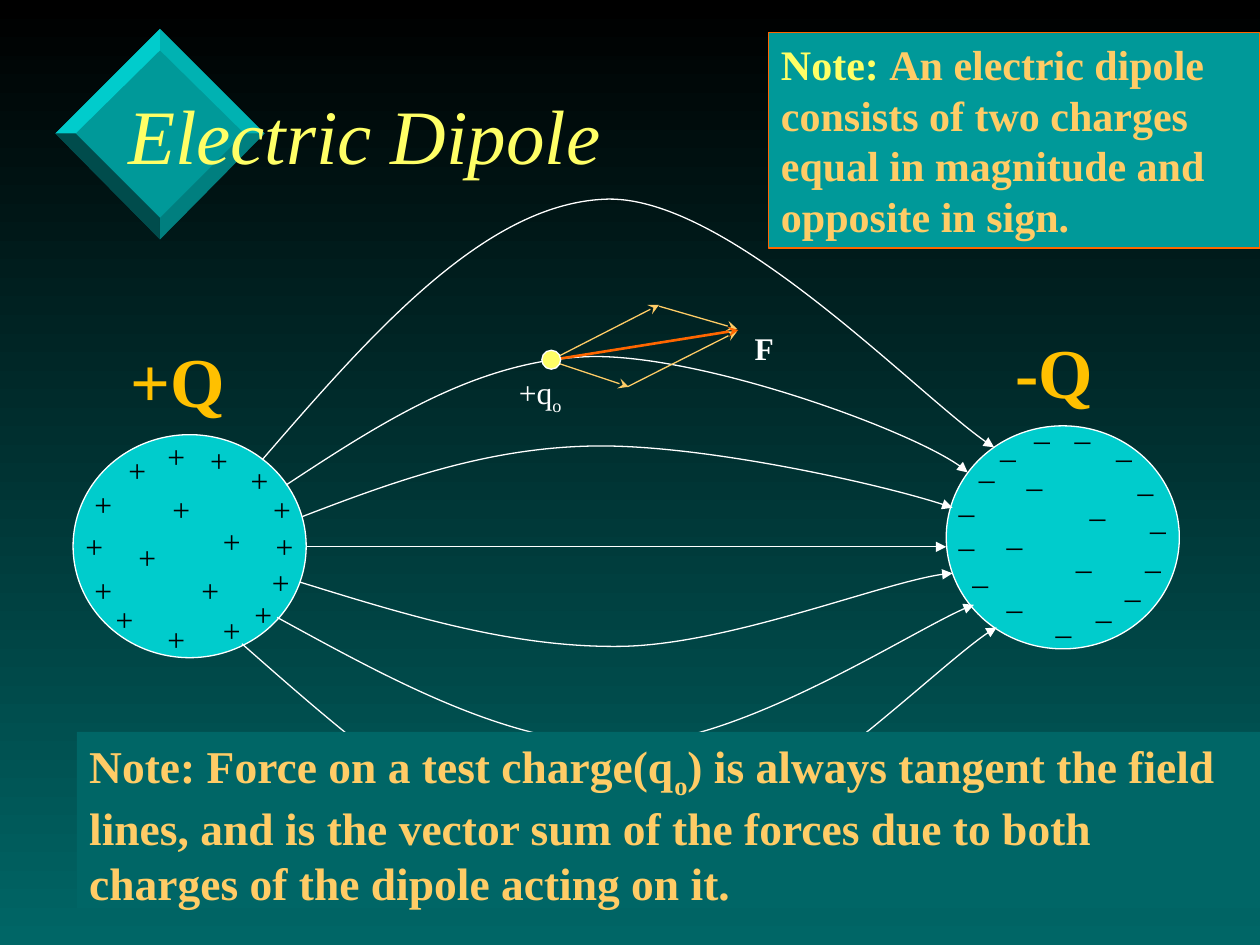
from lxml import etree
from pptx import Presentation
from pptx.dml.color import RGBColor
from pptx.enum.shapes import MSO_CONNECTOR, MSO_SHAPE
from pptx.enum.text import MSO_ANCHOR, MSO_AUTO_SIZE
from pptx.oxml.ns import qn
from pptx.util import Inches, Pt

STRAIGHT = MSO_CONNECTOR.STRAIGHT
OVAL = MSO_SHAPE.OVAL
MIDDLE = MSO_ANCHOR.MIDDLE
GROW = MSO_AUTO_SIZE.SHAPE_TO_FIT_TEXT

COLORS = {
    "black": "000000", "white": "FFFFFF", "deep": "006666", "teal": "009999",
    "cyan": "00CCCC", "yellow": "FFFF66", "sand": "FFCC66",
    "orange": "FF6600", "gold": "FFC000",
}


def rgb(name):
    return RGBColor.from_string(COLORS[name])


class Board:
    """Holds the text style and the current slide."""

    font = "Times New Roman"

    def __init__(self, page):
        self.page = page
        self.shapes = page.shapes

    def background(self, top, bottom):
        fill = self.page.background.fill
        fill.gradient()
        fill.gradient_angle = 270
        for stop, name, position in zip(fill.gradient_stops, (top, bottom), (0, 1)):
            stop.color.rgb = rgb(name)
            stop.position = position

    def paint(self, shape, fill=None, line=None, alpha=None):
        if fill:
            shape.fill.solid()
            shape.fill.fore_color.rgb = rgb(fill)
        else:
            shape.fill.background()
        if alpha:
            color = shape._element.spPr.find(qn("a:solidFill"))[0]
            etree.SubElement(color, qn("a:alpha")).set("val", str(alpha * 1000))
        if line:
            shape.line.color.rgb = rgb(line)
            shape.line.width = Pt(0.75)
        else:
            shape.line.fill.background()

    def arrowhead(self, shape, kind):
        line = shape.line._get_or_add_ln()
        etree.SubElement(line, qn("a:tailEnd")).set("type", kind)

    def circle(self, left, top, width, height, fill):
        shape = self.shapes.add_shape(
            OVAL, Inches(left), Inches(top), Inches(width), Inches(height))
        shape.shadow.inherit = False
        self.paint(shape, fill, "white")

    def outline(self, points, closed):
        points = [(Inches(x), Inches(y)) for x, y in points]
        builder = self.shapes.build_freeform(*points[0], scale=1.0)
        builder.add_line_segments(points[1:], close=closed)
        shape = builder.convert_to_shape()
        shape.shadow.inherit = False
        return shape

    def facet(self, points, fill, alpha=None):
        self.paint(self.outline(points, True), fill, alpha=alpha)

    def field_line(self, points):
        """Draw a start point followed by triples of Bezier points."""
        shape = self.outline(points, False)
        self.paint(shape, line="white")
        self.arrowhead(shape, "triangle")
        segments = list(shape._element.spPr.iter(qn("a:lnTo")))
        for first in range(0, len(segments), 3):
            curve, *others = segments[first:first + 3]
            curve.tag = qn("a:cubicBezTo")
            for other in others:
                curve.append(other[0])
                other.getparent().remove(other)

    def arrow(self, start, end, color, kind="stealth", width=0.75):
        line = self.shapes.add_connector(
            STRAIGHT, *(Inches(value) for value in (*start, *end)))
        line.line.color.rgb = rgb(color)
        line.line.width = Pt(width)
        self.arrowhead(line, kind)
        etree.SubElement(line._element.spPr, qn("a:effectLst"))

    def text(self, place, spans, size, bold=False, italic=False,
             wrap=False, grow=True, fill=None, line=None):
        """Write spans of (text, colour) or (text, colour, baseline)."""
        box = self.shapes.add_textbox(*(Inches(value) for value in place))
        self.paint(box, fill, line)
        frame = box.text_frame
        frame.word_wrap = wrap
        if grow:
            frame.auto_size = GROW
        else:
            frame.vertical_anchor = MIDDLE
        para = frame.paragraphs[0]
        para.font.name = self.font
        para.font.size = Pt(size)
        para.font.bold = bold
        para.font.italic = italic
        for content, color, *baseline in spans:
            span = para.add_run()
            span.text = content
            span.font.color.rgb = rgb(color)
            if baseline:
                span._r.get_or_add_rPr().set("baseline", str(baseline[0] * 1000))


def main():
    deck = Presentation()
    deck.slide_width, deck.slide_height = Inches(10), Inches(7.5)
    board = Board(deck.slides.add_slide(deck.slide_layouts[6]))
    board.background("black", "deep")

    # Bevelled diamond: outer and inner corners
    top, right, bottom, left = (1.27, 0.23), (2.1, 1.06), (1.27, 1.9), (0.44, 1.06)
    in_top, in_right, in_bottom, in_left = (1.27, 0.4), (1.94, 1.06), (1.27, 1.73), (0.6, 1.06)
    board.facet([top, left, bottom, right], "teal")
    board.facet([in_top, top, right, in_right], "cyan", 50)
    board.facet([top, in_top, in_left, left], "cyan")
    board.facet([in_right, right, bottom, in_bottom], "deep", 50)
    board.facet([in_left, in_bottom, bottom, left], "black", 50)

    # Title
    board.text((0.92, 0.46, 8.51, 1.21), [("Electric Dipole", "yellow")], 44,
               italic=True, wrap=True, grow=False)

    # Charged spheres, each with its signs
    plus_places = [
        (1.57, 3.45), (1.89, 3.61), (2.07, 3.84), (2.09, 4.13), (1.67, 4.09), (2.06, 4.42),
        (1.92, 4.67), (1.5, 4.48), (1.67, 4.8), (1, 4.22), (1.23, 4.87), (0.65, 4.48),
        (0.82, 4.71), (0.92, 3.53), (1.27, 3.84), (1.23, 3.42), (0.58, 4.13), (0.65, 3.8)]
    minus_places = [
        (8.43, 3.2), (8.11, 3.2), (9.03, 3.91), (7.84, 3.34), (7.51, 3.78), (7.51, 4.05),
        (7.62, 4.34), (8.93, 3.61), (8.99, 4.22), (7.67, 3.51), (8.83, 4.45), (8.6, 4.62),
        (8.28, 4.74), (7.89, 4.54), (8.76, 3.34), (8.05, 3.57), (8.55, 3.81), (7.89, 4.04),
        (8.44, 4.22)]
    for x, y, sign, width, places in ((0.58, 3.45, "+", 0.34, plus_places),
                                      (7.51, 3.38, "_", 0.33, minus_places)):
        board.circle(x, y, 1.85, 1.77, "cyan")
        for place in places:
            board.text((*place, width, 0.4), [(sign, "black")], 18)

    # Field lines
    board.arrow((2.43, 4.34), (7.51, 4.34), "white", "triangle")
    field_lines = [
        [(2.4, 4.1), (3.13, 3.82), (3.87, 3.55), (4.73, 3.54),
         (5.59, 3.53), (7.12, 3.87), (7.56, 4.03)],
        [(2.38, 4.62), (3.22, 4.88), (4.06, 5.14), (4.92, 5.13),
         (5.78, 5.12), (7.13, 4.57), (7.56, 4.55)],
        [(2.2, 4.9), (3.13, 5.41), (4.06, 5.92), (4.98, 5.91),
         (5.9, 5.89), (7.35, 4.93), (7.73, 4.8)],
        [(1.92, 5.11), (2.92, 5.99), (3.93, 6.88), (4.93, 6.85),
         (5.93, 6.83), (7.52, 5.18), (7.91, 4.98)],
        [(2.27, 3.85), (3.03, 3.35), (3.8, 2.85), (4.7, 2.83),
         (5.6, 2.82), (7.41, 3.48), (7.68, 3.75)],
        [(2.08, 3.65), (2.97, 2.62), (3.87, 1.6), (4.83, 1.58),
         (5.8, 1.57), (7.37, 3.23), (7.89, 3.55)],
    ]
    for points in field_lines:
        board.field_line(points)

    # Notes
    board.text((0.61, 5.81, 9.39, 1.4), [
        ("Note: Force on a test charge(q", "sand"), ("o", "sand", -25),
        (") is always tangent the field lines, and is the vector sum of the forces "
         "due to both charges of the dipole acting on it.", "sand")],
        26, bold=True, wrap=True, fill="deep")
    board.text((6.1, 0.26, 3.9, 1.71), [
        ("Note: ", "yellow"),
        ("An electric dipole consists of two charges equal in magnitude and "
         "opposite in sign.", "sand")],
        24, bold=True, wrap=True, fill="teal", line="orange")

    # Force parallelogram and its resultant
    for start, end in (((4.37, 2.86), (5.23, 2.42)), ((5.23, 2.43), (5.85, 2.61)),
                       ((4.36, 2.86), (4.99, 3.07)), ((4.98, 3.07), (5.85, 2.63))):
        board.arrow(start, end, "sand")
    board.text((5.89, 2.56, 0.35, 0.4), [("F", "white")], 18, bold=True)
    board.arrow((4.42, 2.85), (5.86, 2.62), "orange", width=1.5)

    # Test charge
    board.text((4.02, 2.91, 0.55, 0.4), [("+q", "white"), ("o", "white", -25)], 18)
    board.circle(4.3, 2.78, 0.15, 0.15, "yellow")

    # Sphere labels
    board.text((0.94, 2.63, 0.96, 0.77), [("+Q", "gold")], 40, bold=True)
    board.text((7.96, 2.56, 0.83, 0.77), [("-Q", "gold")], 40, bold=True)

    deck.save("out.pptx")


if __name__ == "__main__":
    main()
